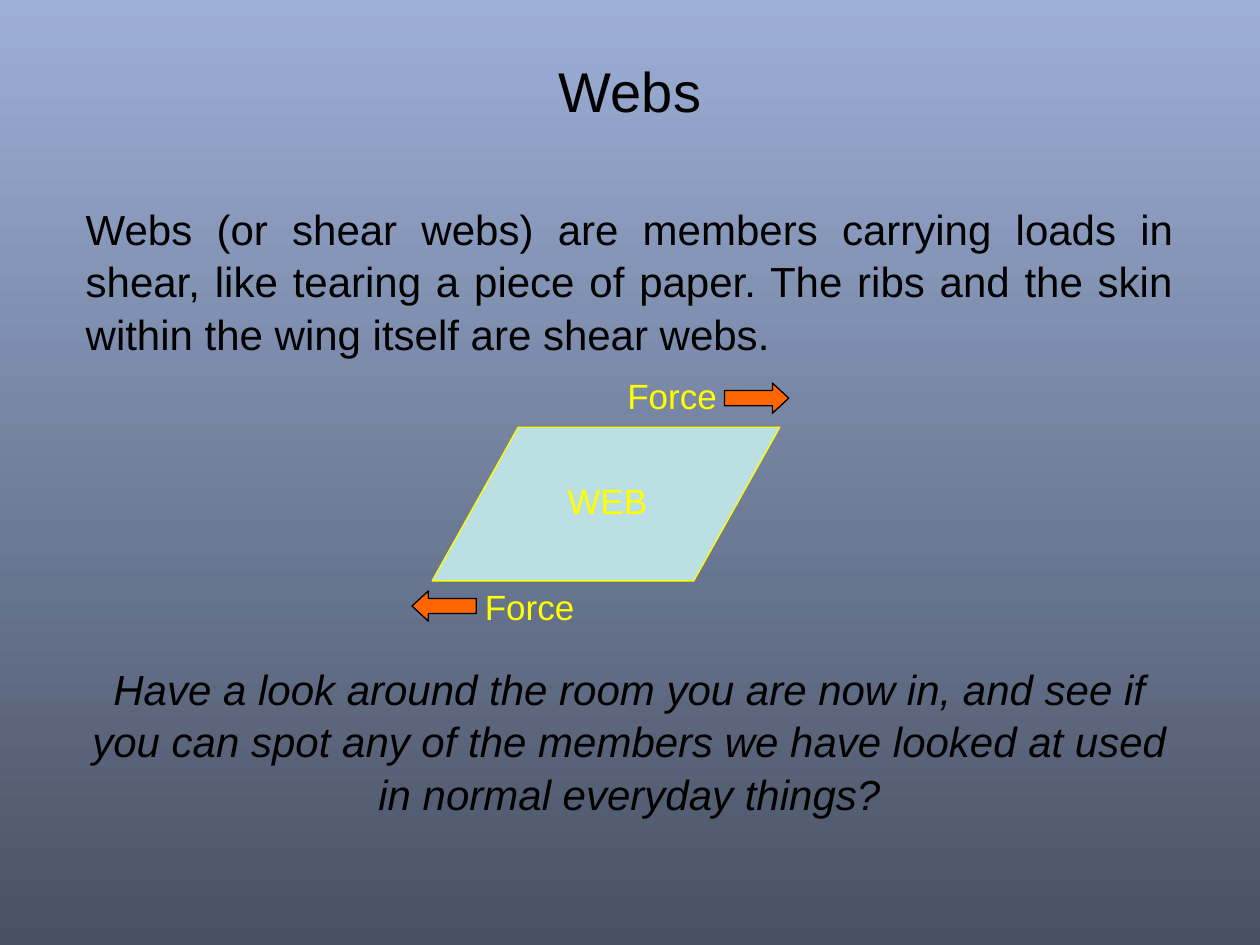
from lxml import etree
from pptx import Presentation
from pptx.dml.color import RGBColor
from pptx.enum.shapes import MSO_SHAPE
from pptx.enum.text import MSO_ANCHOR, MSO_AUTO_SIZE, PP_ALIGN
from pptx.oxml.ns import qn
from pptx.util import Inches, Pt

LEFT, MID, FULL = PP_ALIGN.LEFT, PP_ALIGN.CENTER, PP_ALIGN.JUSTIFY
TOP, CENTRE = MSO_ANCHOR.TOP, MSO_ANCHOR.MIDDLE
NOFIT, GROW = MSO_AUTO_SIZE.NONE, MSO_AUTO_SIZE.SHAPE_TO_FIT_TEXT
ARROW, WEB = MSO_SHAPE.LEFT_ARROW, MSO_SHAPE.PARALLELOGRAM

BLACK, YELLOW, ORANGE, PALE = "000000", "FFFF00", "FF6600", "BBE0E3"


def tint(color, value):
    """Give a colour format the hex value."""
    color.rgb = RGBColor.from_string(value)


def assign(item, values):
    """Set each named value on the item."""
    for name, value in values.items():
        setattr(item, name, value)


def place(shape, box):
    """Put a shape at left, top, width and height in inches."""
    names = ("left", "top", "width", "height")
    assign(shape, dict(zip(names, map(Inches, box))))


class Deck:
    """Hold the text style and the current slide."""

    face = "Arial"

    def __init__(self, show):
        """Add a title and body slide to the show."""
        self.slide = show.slides.add_slide(show.slide_layouts[1])

    def ground(self, *colors):
        """Fill the background from top to bottom."""
        fill = self.slide.background.fill
        fill.gradient()
        fill.gradient_angle = 270
        for stop, value in zip(fill.gradient_stops, colors):
            tint(stop.color, value)

    def phrase(self, para, text, size, color, **form):
        """Fill one styled paragraph."""
        para.text = text
        assign(para, form)
        assign(para.font, {"name": self.face, "size": Pt(size)})
        tint(para.font.color, color)

    def title(self, text, box):
        """Fill the title placeholder."""
        shape = self.slide.shapes.title
        place(shape, box)
        frame = shape.text_frame
        assign(frame, {"vertical_anchor": CENTRE, "auto_size": NOFIT})
        self.phrase(frame.paragraphs[0], text, 32, BLACK, alignment=MID)

    def body(self, items, box):
        """Fill the body placeholder with plain paragraphs."""
        shape = self.slide.placeholders[1]
        place(shape, box)
        frame = shape.text_frame
        assign(frame, {"vertical_anchor": TOP, "auto_size": NOFIT})
        for index, (text, align, gap, slant) in enumerate(items):
            para = frame.add_paragraph() if index else frame.paragraphs[0]
            props = para._p.get_or_add_pPr()
            props.set("marL", "0")
            props.set("indent", "0")
            etree.SubElement(props, qn("a:buNone"))
            self.phrase(para, text, 24, BLACK, alignment=align,
                        space_before=Pt(gap), line_spacing=1.04)
            para.font.italic = slant

    def label(self, text, box, align=LEFT):
        """Add a yellow label."""
        shape = self.slide.shapes.add_textbox(*map(Inches, box))
        frame = shape.text_frame
        assign(frame, {"word_wrap": True, "auto_size": GROW})
        self.phrase(frame.paragraphs[0], text, 20, YELLOW, alignment=align)

    def shape(self, kind, box, fill, line, adjust, turn=0):
        """Add a filled and outlined preset shape."""
        shape = self.slide.shapes.add_shape(kind, *map(Inches, box))
        shape.shadow.inherit = False
        shape.rotation = turn
        for index, value in enumerate(adjust):
            shape.adjustments[index] = value
        shape.fill.solid()
        tint(shape.fill.fore_color, fill)
        tint(shape.line.color, line)
        shape.line.width = Pt(0.75)


def main():
    """Build and save the slide."""
    show = Presentation()
    assign(show, {"slide_width": Inches(10), "slide_height": Inches(7.5)})
    deck = Deck(show)
    deck.ground("9CAFD7", "485163")
    deck.title("Webs", (0.5, 0.09, 9, 1.25))
    deck.body([
        ("Webs (or shear webs) are members carrying loads in shear, like "
         "tearing a piece of paper. The ribs and the skin within the wing "
         "itself are shear webs.", FULL, 0, False),
        ("Have a look around the room you are now in, and see if you can "
         "spot any of the members we have looked at used in normal everyday "
         "things?", MID, 173, True),
    ], (0.58, 1.55, 8.83, 5.75))
    forces = [((5.75, 3.04), 180, (4.88, 2.92, 1.02, 0.43)),
              ((3.27, 4.69), 0, (3.75, 4.6, 0.94, 0.43))]
    for spot, turn, box in forces:
        deck.shape(ARROW, (*spot, 0.51, 0.24), ORANGE, BLACK,
                   (0.5, 0.54), turn)
        deck.label("Force", box)
    deck.shape(WEB, (3.43, 3.39, 2.76, 1.22), PALE, YELLOW, (0.56,))
    deck.label("WEB", (4.31, 3.76, 1.02, 0.43), MID)
    show.save("out.pptx")


if __name__ == "__main__":
    main()
